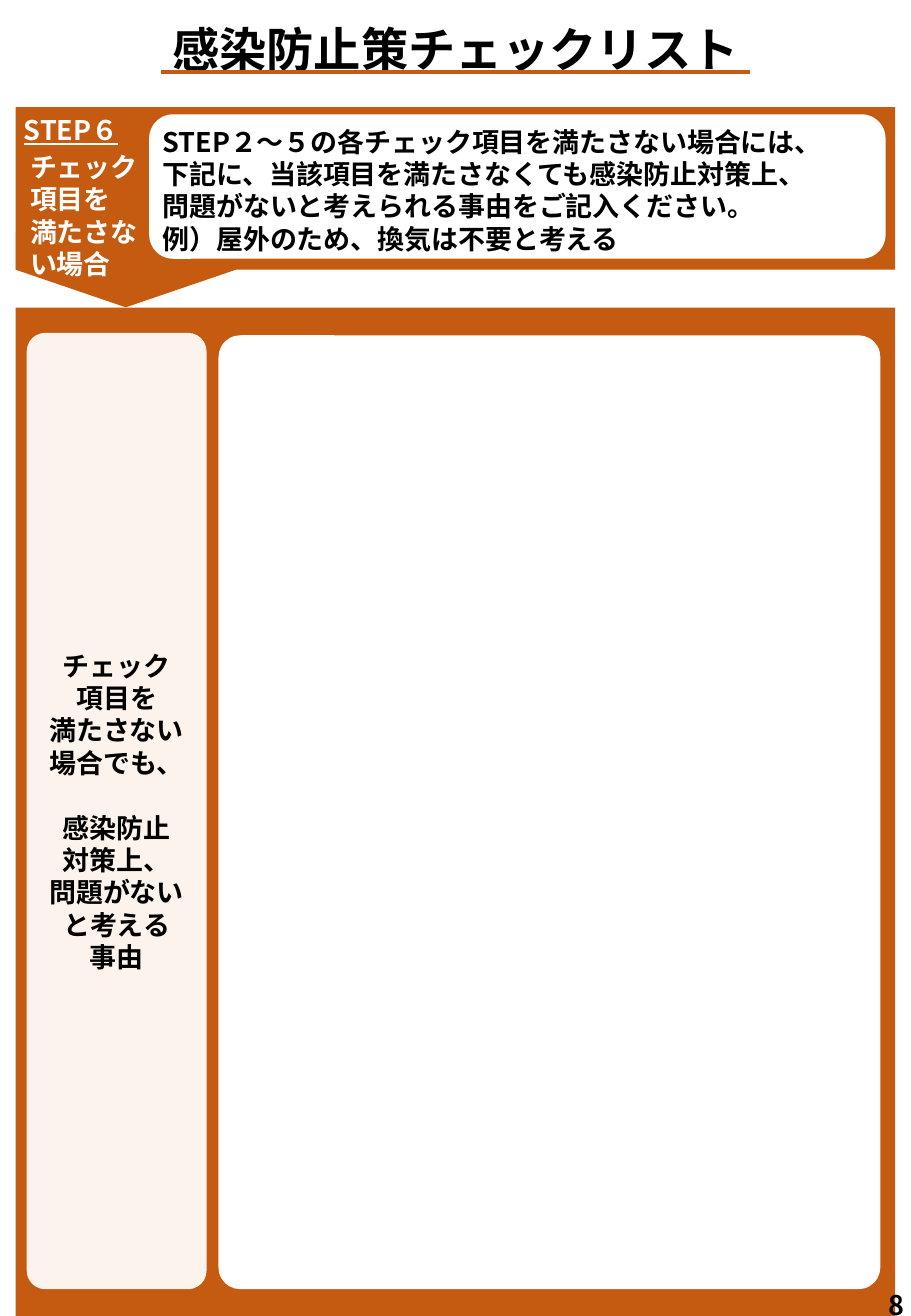
from lxml import etree
from pptx import Presentation
from pptx.dml.color import RGBColor
from pptx.enum.shapes import MSO_CONNECTOR, MSO_SHAPE
from pptx.enum.text import MSO_ANCHOR, PP_ALIGN
from pptx.oxml.ns import qn
from pptx.util import Cm, Pt

FONT = "Noto Sans CJK JP"
ORANGE = RGBColor(0xC5, 0x5A, 0x11)
CREAM = RGBColor(0xFD, 0xF3, 0xED)
WHITE = RGBColor(0xFF, 0xFF, 0xFF)
BLACK = RGBColor(0, 0, 0)

WIDTH, HEIGHT = 19.05, 27.51
MARGIN = 0.33
BODY_TOP = 6.43


def add_block(slide, kind, left, top, width, height, color, radius=None):
    shape = slide.shapes.add_shape(kind, Cm(left), Cm(top), Cm(width), Cm(height))
    shape.shadow.inherit = False
    shape.fill.solid()
    shape.fill.fore_color.rgb = color
    shape.line.fill.background()
    if radius is not None:
        shape.adjustments[0] = radius
    return shape


def write_text(shape, lines, size=16, color=BLACK, align=PP_ALIGN.LEFT):
    """Fill a shape with bold lines at an even pitch."""
    frame = shape.text_frame
    frame.word_wrap = True
    frame.text = "\n".join(lines)
    for paragraph in frame.paragraphs:
        paragraph.alignment = align
        paragraph.line_spacing = Pt(size * 1.2)
        for run in paragraph.runs:
            run.font.name = FONT
            run.font.size = Pt(size)
            run.font.bold = True
            run.font.color.rgb = color
            east_asian = etree.Element(qn("a:ea"), typeface=FONT)
            run.font._element.find(qn("a:latin")).addnext(east_asian)
    return frame.paragraphs


def add_text(slide, left, top, width, height, lines, **style):
    box = slide.shapes.add_textbox(Cm(left), Cm(top), Cm(width), Cm(height))
    return write_text(box, lines, **style)


def add_title(slide, left, top, width, height):
    add_text(slide, left, top, width, height, ["感染防止策チェックリスト"],
             size=28, align=PP_ALIGN.CENTER)
    # Underline, centred below the title
    middle, line_top, half = left + width / 2, top + 1.2, 6.15
    line = slide.shapes.add_connector(
        MSO_CONNECTOR.STRAIGHT, Cm(middle - half), Cm(line_top),
        Cm(middle + half), Cm(line_top))
    line.line.color.rgb = ORANGE
    line.line.width = Pt(2.25)
    etree.SubElement(line._element.spPr, qn("a:effectLst"))


def add_step_header(slide, left, top, width, height):
    # Downward pointer: a pentagon turned a quarter, centred on the lower edge
    pointer_width, pointer_length = 4.6, 1.57
    pointer = add_block(
        slide, MSO_SHAPE.PENTAGON,
        left + (pointer_width - pointer_length) / 2,
        top + height - pointer_width / 2,
        pointer_length, pointer_width, ORANGE)
    pointer.rotation = 90

    # Banner with the white instruction panel
    add_block(slide, MSO_SHAPE.RECTANGLE, left, top, width, height, ORANGE)
    add_block(slide, MSO_SHAPE.ROUNDED_RECTANGLE, left + 2.79, top + 0.15,
              15.4, 3.02, WHITE)

    # Step label
    step, *details = add_text(
        slide, left - 0.08, top, 3.02, 3.81,
        ["STEP６", "チェック", "項目を", "満たさな", "い場合"], color=WHITE)
    step.runs[0].font.underline = True
    step.space_after = Pt(3)
    for paragraph in details:
        paragraph._p.get_or_add_pPr().set("marL", str(Cm(0.13)))

    # Instructions
    add_text(slide, left + 2.82, top + 0.25, 15.6, 3, [
        "STEP２～５の各チェック項目を満たさない場合には、",
        "下記に、当該項目を満たさなくても感染防止対策上、",
        "問題がないと考えられる事由をご記入ください。",
        "例）屋外のため、換気は不要と考える"])


def add_reason_form(slide, left, top, width, height):
    add_block(slide, MSO_SHAPE.RECTANGLE, left, top, width, height, ORANGE)

    # Label column
    label = add_block(slide, MSO_SHAPE.ROUNDED_RECTANGLE, left + 0.23, top + 0.53,
                      3.76, 19.99, CREAM, 0.102)
    frame = label.text_frame
    frame.vertical_anchor = MSO_ANCHOR.MIDDLE
    frame.margin_left = frame.margin_right = Cm(0.18)
    frame.margin_top = frame.margin_bottom = Cm(0.1)
    paragraphs = write_text(
        label,
        ["チェック", "項目を", "満たさない", "場合でも、",
         "感染防止", "対策上、", "問題がない", "と考える", "事由"],
        align=PP_ALIGN.CENTER)
    paragraphs[4].space_before = Pt(19.2)

    # Answer area
    add_block(slide, MSO_SHAPE.ROUNDED_RECTANGLE, left + 4.24, top + 0.58,
              13.84, 19.94, WHITE, 0.033)


def add_page_number(slide, left, top, width, height):
    number = slide.shapes.add_textbox(Cm(left), Cm(top), Cm(width), Cm(height))
    number.text_frame.margin_right = 0
    write_text(number, ["8"])


def main():
    presentation = Presentation()
    presentation.slide_width = Cm(WIDTH)
    presentation.slide_height = Cm(HEIGHT)
    slide = presentation.slides.add_slide(presentation.slide_layouts[6])

    content_width = WIDTH - 2 * MARGIN
    add_title(slide, 1.22, 0.3, 16.61, 1.45)
    add_step_header(slide, MARGIN, 2.24, content_width, 3.4)
    add_reason_form(slide, MARGIN, BODY_TOP, content_width, HEIGHT - BODY_TOP)
    add_page_number(slide, 18.34, 26.82, 0.71, 0.69)
    presentation.save("out.pptx")


if __name__ == "__main__":
    main()
